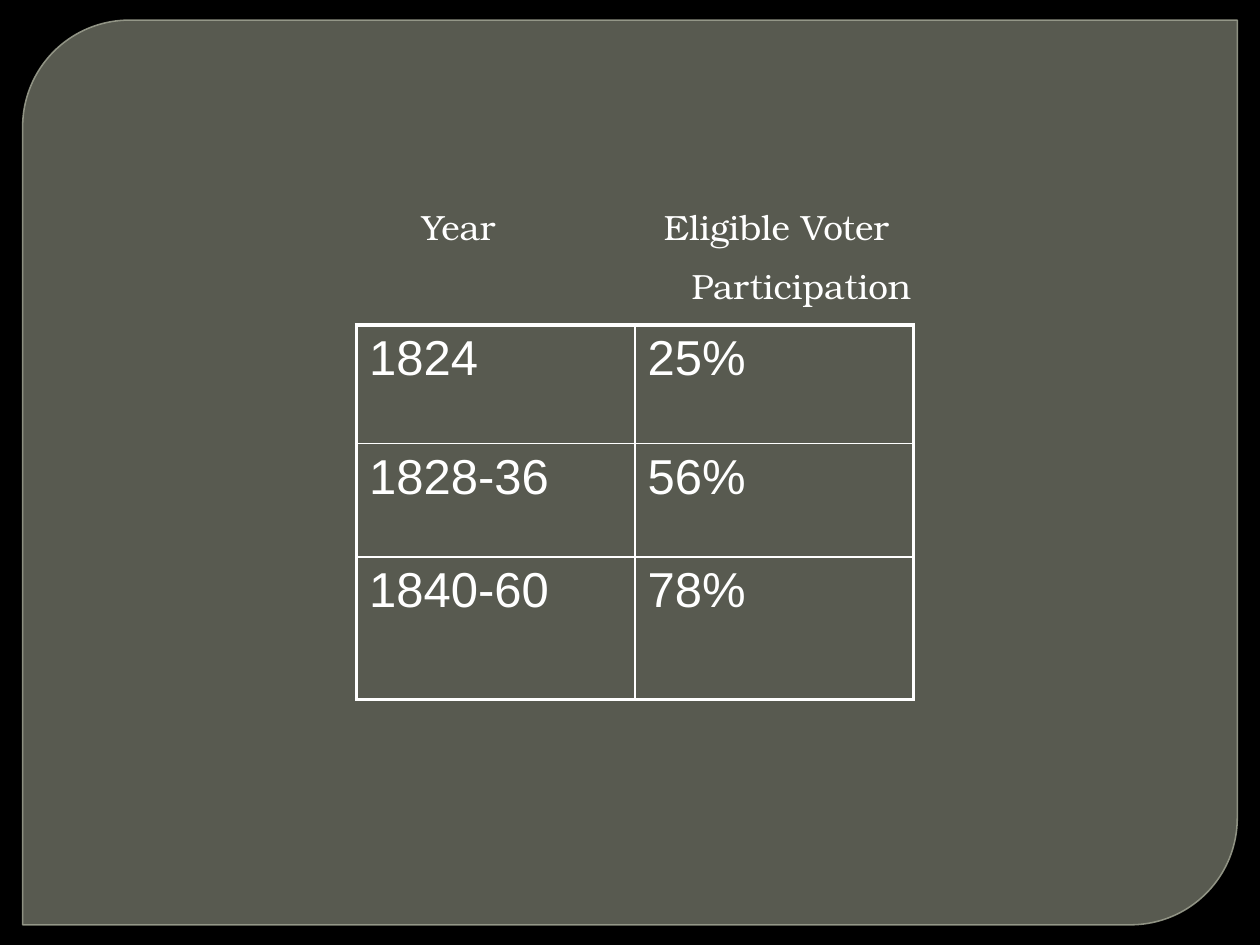
from dataclasses import dataclass

from lxml.etree import SubElement
from pptx import Presentation
from pptx.dml.color import RGBColor
from pptx.enum.shapes import MSO_SHAPE
from pptx.oxml.ns import qn
from pptx.util import Inches, Pt

WHITE = "FFFFFF"
THICK, THIN = 2.25, 1


@dataclass
class Turnout:
    years: str
    share: str
    height: float


TURNOUTS = [
    Turnout("1824", "25%", 0.94),
    Turnout("1828-36", "56%", 0.9),
    Turnout("1840-60", "78%", 1.13),
]
HEADING_FONT = {"name": "TeX Gyre Bonum", "size": Pt(20)}
CELL_FONT = {"name": "Arial", "size": Pt(28), "bold": False}


def color(value: str) -> RGBColor:
    return RGBColor.from_string(value)


def format_font(font, values: dict) -> None:
    for name, value in values.items():
        setattr(font, name, value)
    font.color.rgb = color(WHITE)


def set_alpha(fill_format, percent: int) -> None:
    srgb = fill_format._xPr.find(".//" + qn("a:srgbClr"))
    SubElement(srgb, qn("a:alpha"), val=str(percent * 1000))


def set_borders(cell, widths: dict) -> None:
    properties = cell._tc.get_or_add_tcPr()
    for index, (side, width) in enumerate(widths.items()):
        border = SubElement(properties, qn(f"a:ln{side}"), w=str(Pt(width)))
        fill = SubElement(border, qn("a:solidFill"))
        SubElement(fill, qn("a:srgbClr"), val=WHITE)
        properties.insert(index, border)  # borders precede the cell fill


def add_panel(slide) -> None:
    panel = slide.shapes.add_shape(
        MSO_SHAPE.ROUND_2_DIAG_RECTANGLE,
        Inches(0.18), Inches(0.16), Inches(9.64), Inches(7.18))
    panel.adjustments[0] = 0.118
    panel.adjustments[1] = 0
    panel.shadow.inherit = False
    panel.fill.solid()
    panel.fill.fore_color.rgb = color("888B7B")
    set_alpha(panel.fill, 65)
    panel.line.color.rgb = color("9DA090")
    panel.line.width = Pt(0.87)
    set_alpha(panel.line.fill, 88)


def add_turnout_table(slide) -> None:
    table = slide.shapes.add_table(
        len(TURNOUTS), 2, Inches(2.83), Inches(2.58),
        Inches(4.42), Inches(2.97)).table
    table.first_row = table.horz_banding = False
    last = len(TURNOUTS) - 1
    for row, turnout in enumerate(TURNOUTS):
        table.rows[row].height = Inches(turnout.height)
        for column, content in enumerate((turnout.years, turnout.share)):
            cell = table.cell(row, column)
            cell.text = content
            format_font(cell.text_frame.paragraphs[0].runs[0].font, CELL_FONT)
            cell.fill.background()
            set_borders(cell, {
                "L": THICK if column == 0 else THIN,
                "R": THICK if column == 1 else THIN,
                "T": THICK if row == 0 else THIN,
                "B": THICK if row == last else THIN,
            })


def add_headings(slide) -> None:
    frame = slide.shapes.add_textbox(
        Inches(3.25), Inches(1.58), Inches(5.58), Inches(1.43)).text_frame
    frame.word_wrap = True
    first_line = frame.paragraphs[0]
    second_line = frame.add_paragraph()
    second_line.space_before = Pt(10)
    lines = [(first_line, "Year\tEligible Voter", 1.92),
             (second_line, "\tParticipation", 2.14)]
    for line, content, tab in lines:
        run = line.add_run()
        run.text = content
        format_font(run.font, HEADING_FONT)
        # The tab stop sets where the second column's heading begins
        stops = SubElement(line._p.get_or_add_pPr(), qn("a:tabLst"))
        SubElement(stops, qn("a:tab"), pos=str(Inches(tab)), algn="l")


def main() -> None:
    presentation = Presentation()
    presentation.slide_width = Inches(10)
    presentation.slide_height = Inches(7.5)
    slide = presentation.slides.add_slide(presentation.slide_layouts[6])
    slide.background.fill.solid()
    slide.background.fill.fore_color.rgb = color("000000")
    add_panel(slide)
    add_turnout_table(slide)
    add_headings(slide)
    presentation.save("out.pptx")


if __name__ == "__main__":
    main()
